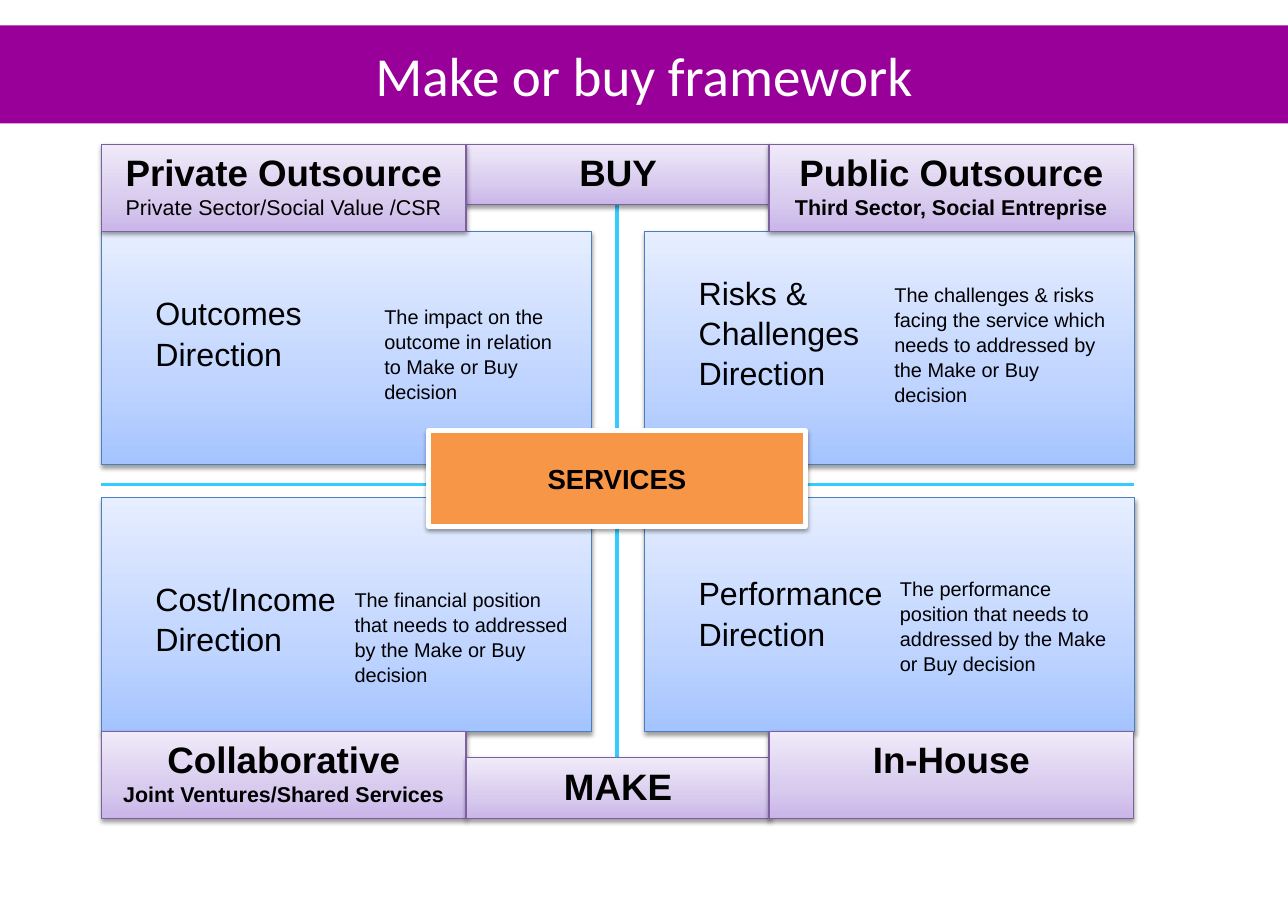
"""Build the make or buy framework slide."""
from collections import namedtuple
from dataclasses import dataclass

from lxml.etree import SubElement as Sub
from pptx import Presentation
from pptx.dml.color import RGBColor as Rgb
from pptx.enum.shapes import MSO_CONNECTOR as Connector, MSO_SHAPE as Preset
from pptx.enum.text import MSO_ANCHOR as Anchor, PP_ALIGN as Align
from pptx.oxml.ns import qn
from pptx.util import Pt

PX = 9144
Box = namedtuple("Box", "left top width height")


@dataclass(frozen=True)
class Theme:
    """Colours, fonts and type sizes of the slide."""
    ink: str = "000000"
    paper: str = "FFFFFF"
    banner: str = "990099"
    axis: str = "33CCFF"
    services: str = "F79646"
    panel: tuple = ("A4C4FF", "BFD4FF", "E6EEFF")
    panel_edge: str = "4B7EBC"
    tab: tuple = ("C9B5E8", "D8CBEE", "F0EAF9")
    tab_edge: str = "7D60A0"
    body_font: str = "Arial"
    title_font: str = "Calibri"
    title: int = 36
    tab_name: int = 24
    heading: int = 21
    core: int = 18
    tab_note: int = 14
    caption: int = 13


THEME = Theme()
SLIDE = Box(0, 0, 1169, 827)
BANNER = Box(0, 23, 1169, 89)
FRAME = Box(92, 131, 937, 612)
TAB_SIZE, MIDDLE_TAB_SIZE = (331, 79), (276, 55)
PANEL_SIZE, PANEL_STEP = (445, 212), (493, 242)
HEADING_LEFT, HEADING_WIDTH = 49, 185

QUADRANTS = [
    (0, 0, "Outcomes Direction", 55, (247, 61, 189),
     "The impact on the outcome in relation to Make or Buy decision"),
    (1, 0, "Risks & Challenges Direction", 36, (217, 41, 220),
     "The challenges & risks facing the service which needs to addressed "
     "by the Make or Buy decision"),
    (0, 1, "Cost/Income Direction", 72, (220, 76, 220),
     "The financial position that needs to addressed by the Make or Buy decision"),
    (1, 1, "Performance Direction", 67, (222, 66, 220),
     "The performance position that needs to addressed by the Make or Buy decision"),
]
TABS = [
    (1, 0, "BUY", "", True),
    (0, 0, "Private Outsource", "Private Sector/Social Value /CSR", False),
    (2, 0, "Public Outsource", "Third Sector, Social Entreprise", True),
    (0, 1, "Collaborative", "Joint Ventures/Shared Services", True),
    (1, 1, "MAKE", "", True),
    (2, 1, "In-House", "", True),
]


def apply_format(target, values):
    """Set every attribute named in a dict of format values."""
    for attribute, value in values.items():
        setattr(target, attribute, value)


def emu(lengths):
    """Turn px lengths into EMU."""
    return [length * PX for length in lengths]


def write(frame, lines, colour=THEME.ink, font=THEME.body_font,
          align=Align.CENTER, spacing=1.0, **frame_format):
    """Write (text, size, bold) lines into a text frame."""
    apply_format(frame, {"word_wrap": True, **frame_format})
    for index, (text, size, bold) in enumerate(lines):
        paragraph = frame.add_paragraph() if index else frame.paragraphs[0]
        apply_format(paragraph, {"alignment": align, "line_spacing": spacing})
        run = paragraph.add_run()
        run.text = text
        apply_format(run.font, {"name": font, "size": Pt(size), "bold": bold})
        run.font.color.rgb = Rgb.from_string(colour)


def paint(fill, colours):
    """Fill with one colour or with a gradient rising from the bottom."""
    if isinstance(colours, str):
        fill.solid()
        fill.fore_color.rgb = Rgb.from_string(colours)
        return
    fill.gradient()
    fill.gradient_angle = 90


def add_block(slide, box, colours, edge=None, edge_width=0.75):
    """Add a rectangle, with an outline and soft shadow if it has an edge."""
    block = slide.shapes.add_shape(Preset.RECTANGLE, *emu(box))
    block.shadow.inherit = False
    paint(block.fill, colours)
    properties = block.element.spPr
    if not isinstance(colours, str):
        stops = properties.find(".//" + qn("a:gsLst"))
        stops.clear()
        for position, colour in zip((0, 35000, 100000), colours):
            stop = Sub(stops, qn("a:gs"), pos=str(position))
            Sub(stop, qn("a:srgbClr"), val=colour)
    if edge is None:
        block.line.fill.background()
        return block
    block.line.width = Pt(edge_width)
    paint(block.line.fill, edge)
    shadow = Sub(properties.find(qn("a:effectLst")), qn("a:outerShdw"),
                 blurRad=str(Pt(3.1)), dist=str(Pt(1.6)), dir="5400000", rotWithShape="0")
    shade = Sub(shadow, qn("a:srgbClr"), val=THEME.ink)
    Sub(shade, qn("a:alpha"), val="38000")
    return block


def add_axes(slide, box):
    """Draw the cross that separates the four quadrants."""
    middle, level = box.left + box.width // 2, box.top + 309
    reach = MIDDLE_TAB_SIZE[1]
    for ends in ((box.left, level, box.left + box.width, level),
                 (middle, box.top + reach, middle, box.top + box.height - reach)):
        axis = slide.shapes.add_connector(Connector.STRAIGHT, *emu(ends))
        axis.line.width = Pt(2.25)
        paint(axis.line.fill, THEME.axis)
        Sub(axis.element.spPr, qn("a:effectLst"))


def add_quadrant(slide, box, heading, heading_top):
    """Add a panel with its heading on the left."""
    panel = add_block(slide, box, THEME.panel, THEME.panel_edge)
    write(panel.text_frame, [(heading, THEME.heading, False)], align=Align.LEFT,
          spacing=1.05, vertical_anchor=Anchor.TOP, margin_top=heading_top * PX,
          margin_left=HEADING_LEFT * PX,
          margin_right=(box.width - HEADING_LEFT - HEADING_WIDTH) * PX)


def add_caption(slide, box, caption):
    """Add the explanation on the right of a panel."""
    note = slide.shapes.add_textbox(*emu(box))
    write(note.text_frame, [(caption, THEME.caption, False)], align=Align.LEFT, spacing=1.04)


def add_quadrants(slide, box):
    """Place the four panels and their captions in the frame."""
    for column, row, heading, heading_top, place, caption in QUADRANTS:
        left = box.left + column * PANEL_STEP[0]
        top = box.top + TAB_SIZE[1] + row * PANEL_STEP[1]
        add_quadrant(slide, Box(left, top, *PANEL_SIZE), heading, heading_top)
        shift, drop, width = place
        add_caption(slide, Box(left + shift, top + drop, width, 98), caption)


def add_tabs(slide, box):
    """Place the option tabs along the top and bottom of the frame."""
    lefts = (0, TAB_SIZE[0], box.width - TAB_SIZE[0])
    for column, row, name, note, note_bold in TABS:
        width, height = MIDDLE_TAB_SIZE if column == 1 else TAB_SIZE
        top = box.top + row * (box.height - height)
        tab = add_block(slide, Box(box.left + lefts[column], top, width, height),
                        THEME.tab, THEME.tab_edge)
        lines = [(name, THEME.tab_name, True)]
        if note:
            lines.append((note, THEME.tab_note, note_bold))
        write(tab.text_frame, lines, vertical_anchor=Anchor.TOP)


def add_services(slide, box):
    """Place the services block at the centre of the frame."""
    width, height = 342, 87
    centre = Box(box.left + (box.width - width) // 2, box.top + 260, width, height)
    services = add_block(slide, centre, THEME.services, THEME.paper, 3)
    write(services.text_frame, [("SERVICES", THEME.core, True)],
          vertical_anchor=Anchor.MIDDLE)


def add_banner(slide, box):
    """Add the title banner."""
    banner = add_block(slide, box, THEME.banner)
    write(banner.text_frame, [("Make or buy framework", THEME.title, False)],
          THEME.paper, THEME.title_font, vertical_anchor=Anchor.MIDDLE)


def main():
    """Build and save the presentation."""
    deck = Presentation()
    apply_format(deck, {"slide_width": SLIDE.width * PX, "slide_height": SLIDE.height * PX})
    slide = deck.slides.add_slide(deck.slide_layouts[6])
    for add_region in (add_axes, add_quadrants, add_tabs, add_services):
        add_region(slide, FRAME)
    add_banner(slide, BANNER)
    deck.save("out.pptx")


if __name__ == "__main__":
    main()
